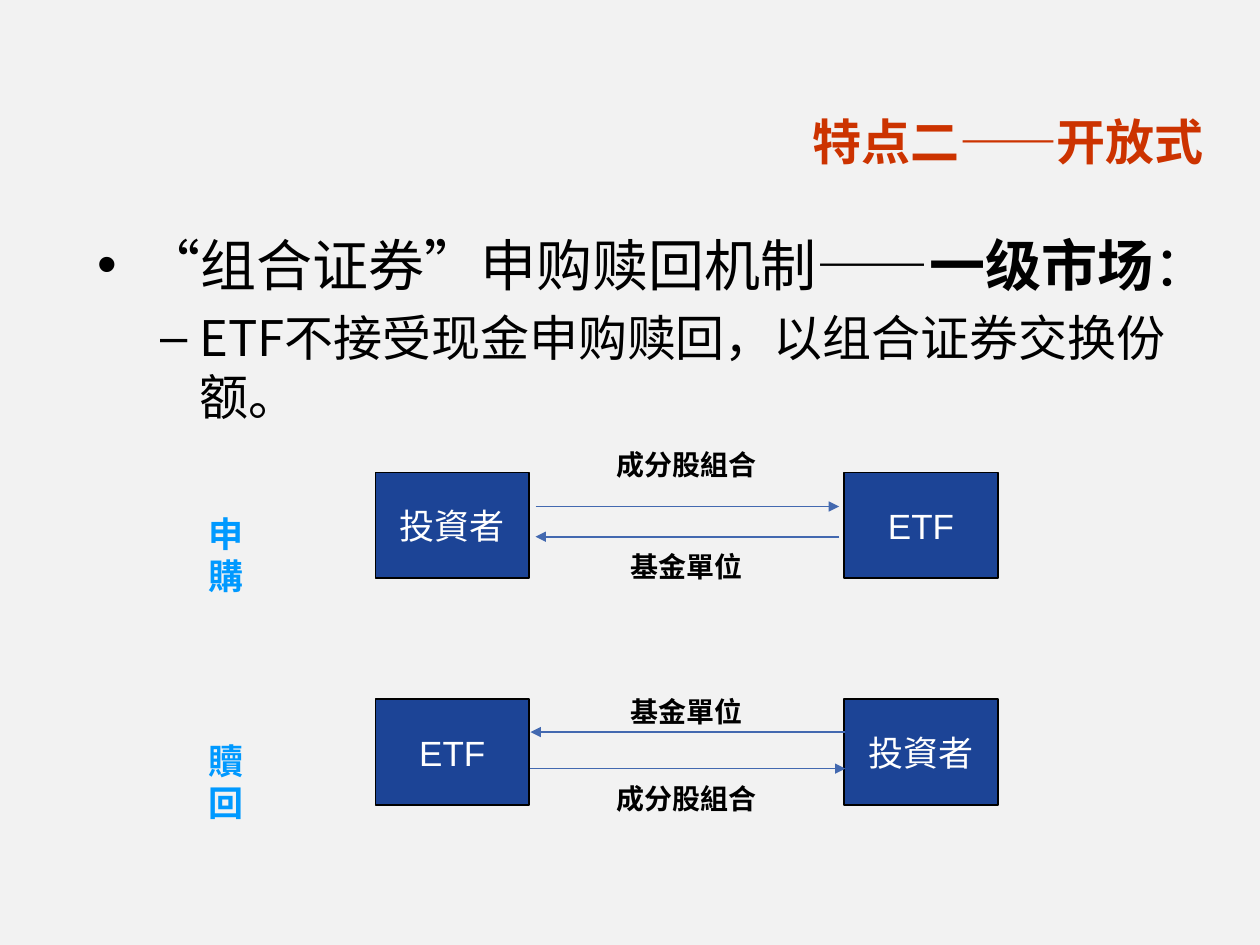
from lxml import etree
from pptx import Presentation
from pptx.dml.color import RGBColor
from pptx.enum.shapes import MSO_CONNECTOR, MSO_SHAPE
from pptx.enum.text import MSO_ANCHOR, MSO_AUTO_SIZE, PP_ALIGN
from pptx.oxml.ns import qn
from pptx.util import Inches, Pt

RECTANGLE, STRAIGHT = MSO_SHAPE.RECTANGLE, MSO_CONNECTOR.STRAIGHT
MIDDLE, CENTER, NO_FIT = MSO_ANCHOR.MIDDLE, PP_ALIGN.CENTER, MSO_AUTO_SIZE.NONE
COLORS = {name: RGBColor.from_string(value) for name, value in {
    "background": "F2F2F2", "title": "CC3300", "text": "000000", "party": "1C4496",
    "party_text": "FFFFFF", "operation": "0099FF", "arrow": "4369B0"}.items()}
CJK, LATIN = "Noto Sans CJK SC", "Arial"


def write(paragraph, text, size=16, color="text", font=CJK, bold=False, align=None):
    """Append one formatted run to the paragraph."""
    run = paragraph.add_run()
    run.text = text
    run.font.size, run.font.bold, run.font.name = Pt(size), bold, font
    run.font.color.rgb = COLORS[color]
    etree.SubElement(run.font._element, qn("a:ea"), typeface=CJK)
    if align is not None:
        paragraph.alignment = align


def place(shape, left, top, width, height):
    """Set the position and size of a shape in inches."""
    shape.left, shape.top = Inches(left), Inches(top)
    shape.width, shape.height = Inches(width), Inches(height)


presentation = Presentation()
presentation.slide_width, presentation.slide_height = Inches(10), Inches(7.5)
slide = presentation.slides.add_slide(presentation.slide_layouts[1])
slide.background.fill.solid()
slide.background.fill.fore_color.rgb = COLORS["background"]

# Title
title = slide.shapes.title
place(title, 6.25, 0.83, 3.5, 0.57)
title.text_frame.auto_size = NO_FIT
write(title.text_frame.paragraphs[0], "特点二——开放式", size=28, color="title",
      bold=True, align=CENTER)

# Mechanism, as a bullet with one sub-point
mechanism = slide.placeholders[1]
place(mechanism, 0.67, 1.78, 9, 4.95)
mechanism.text_frame.auto_size = NO_FIT
point = mechanism.text_frame.paragraphs[0]
write(point, "“组合证券”申购赎回机制——", size=32)
write(point, "一级市场", size=32, bold=True)
write(point, "：", size=32)
detail = mechanism.text_frame.add_paragraph()
detail.level = 1
write(detail, "ETF不接受现金申购赎回，以组合证券交换份额。", size=28)

# Diagram grid: one row per operation, one party at each end
PARTY_COLUMNS = (2.98, 6.70)
PARTY_WIDTH, PARTY_HEIGHT = 1.22, 0.84
FIRST_ROW, ROW_STEP = 3.75, 1.8
LABEL_WIDTH, LABEL_HEIGHT = 1.6, 0.37
LABEL_LEFT = (PARTY_COLUMNS[0] + PARTY_COLUMNS[1] + PARTY_WIDTH - LABEL_WIDTH) / 2
# Flows: label, label offset, arrow offset (from row top), arrow start, arrow end
OPERATIONS = [
    ("申購", ("投資者", "ETF"),
     [("成分股組合", -0.25, 0.27, 4.25, 6.66), ("基金單位", 0.56, 0.51, 6.66, 4.25)]),
    ("贖回", ("ETF", "投資者"),
     [("基金單位", -0.09, 0.26, 6.71, 4.21), ("成分股組合", 0.60, 0.55, 4.21, 6.71)]),
]

for row, (operation, parties, flows) in enumerate(OPERATIONS):
    top = FIRST_ROW + row * ROW_STEP

    # Operation name, wrapped to one character a line
    heading = slide.shapes.add_textbox(
        Inches(1.42), Inches(top + 0.27), Inches(0.75), Inches(0.76))
    heading.text_frame.word_wrap = True
    write(heading.text_frame.paragraphs[0], operation, size=20, color="operation",
          font=LATIN, bold=True, align=CENTER)

    # Parties
    for left, party in zip(PARTY_COLUMNS, parties):
        box = slide.shapes.add_shape(RECTANGLE, Inches(left), Inches(top),
                                     Inches(PARTY_WIDTH), Inches(PARTY_HEIGHT))
        box.shadow.inherit = False
        box.fill.solid()
        box.fill.fore_color.rgb = COLORS["party"]
        box.line.color.rgb, box.line.width = COLORS["text"], Pt(1)
        box.text_frame.vertical_anchor = MIDDLE
        write(box.text_frame.paragraphs[0], party, size=20, color="party_text",
              font=LATIN if party == "ETF" else CJK, align=CENTER)

    # Flows between the parties
    for asset, label_offset, arrow_offset, start, end in flows:
        label = slide.shapes.add_textbox(Inches(LABEL_LEFT), Inches(top + label_offset),
                                         Inches(LABEL_WIDTH), Inches(LABEL_HEIGHT))
        label.text_frame.word_wrap = True
        write(label.text_frame.paragraphs[0], asset, font=LATIN, bold=True, align=CENTER)

        height = Inches(top + arrow_offset)
        arrow = slide.shapes.add_connector(STRAIGHT, Inches(start), height,
                                           Inches(end), height)
        arrow.line.color.rgb, arrow.line.width = COLORS["arrow"], Pt(1)
        etree.SubElement(arrow.line._get_or_add_ln(), qn("a:tailEnd"), type="triangle")
        etree.SubElement(arrow._element.spPr, qn("a:effectLst"))

presentation.save("out.pptx")
